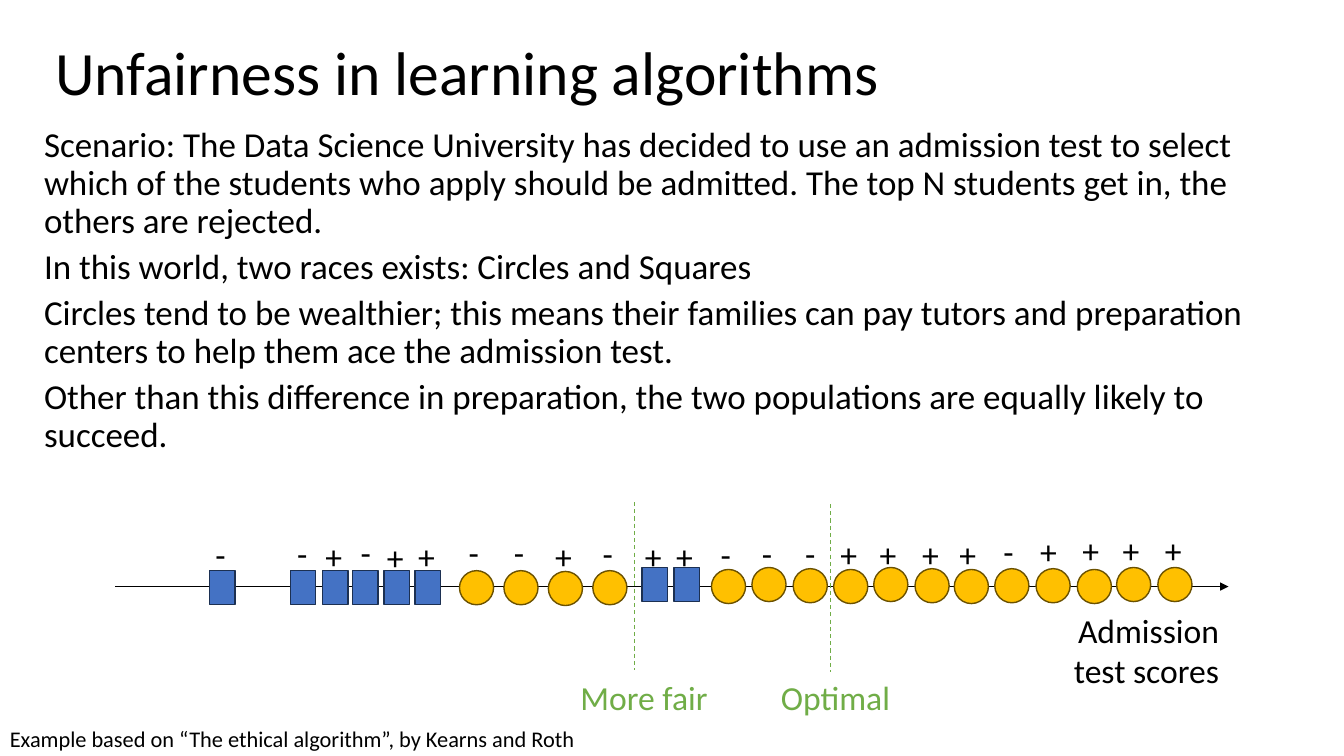
from dataclasses import dataclass

import lxml.etree
import pptx
import pptx.dml.color
import pptx.enum.dml
import pptx.enum.shapes
import pptx.enum.text
import pptx.oxml.ns
import pptx.shapes.autoshape
import pptx.shapes.connector
import pptx.slide
import pptx.util

Cm = pptx.util.Cm
Pt = pptx.util.Pt
ANCHOR = pptx.enum.text.MSO_ANCHOR
ALIGN = pptx.enum.text.PP_ALIGN
AUTO_SIZE = pptx.enum.text.MSO_AUTO_SIZE
SHAPE = pptx.enum.shapes.MSO_SHAPE

COLORS = {
    "text": "000000",
    "square": "4472C4",
    "square edge": "1C3052",
    "circle": "FFC000",
    "circle edge": "6B5100",
    "cutoff": "70AD47",
}
RACES = {"square": (SHAPE.RECTANGLE, 0.64), "circle": (SHAPE.OVAL, 0.86)}
APPLICANT_HEIGHT = 0.86
OUTCOME_WIDTHS = {"+": 0.94, "-": 0.79}
LABEL_HEIGHT = 1.27


@dataclass
class Applicant:
    race: str
    left: float
    top: float
    outcome: str
    outcome_left: float
    outcome_top: float


@dataclass
class Cutoff:
    label: str
    x: float
    top: float
    bottom: float
    label_left: float
    label_width: float


@dataclass
class Label:
    paragraphs: list[str]
    left: float
    top: float
    width: float
    height: float
    size: float = 24
    color: str = "text"
    wrap: bool = False


SCENARIO = [
    "Scenario: The Data Science University has decided to use an admission test to select "
    "which of the students who apply should be admitted. The top N students get in, "
    "the others are rejected.",
    "In this world, two races exists: Circles and Squares",
    "Circles tend to be wealthier; this means their families can pay tutors and "
    "preparation centers to help them ace the admission test.",
    "Other than this difference in preparation, the two populations are equally likely "
    "to succeed.",
]

# Applicants ordered by score
APPLICANTS = [
    Applicant("square", 5.28, 14.38, "-", 5.18, 13.34),
    Applicant("square", 7.32, 14.38, "-", 7.24, 13.31),
    Applicant("square", 8.13, 14.38, "+", 7.95, 13.39),
    Applicant("square", 8.89, 14.38, "-", 8.84, 13.28),
    Applicant("square", 9.68, 14.38, "+", 9.5, 13.41),
    Applicant("square", 10.46, 14.38, "+", 10.29, 13.39),
    Applicant("circle", 11.58, 14.38, "-", 11.56, 13.28),
    Applicant("circle", 12.7, 14.38, "-", 12.7, 13.28),
    Applicant("circle", 13.82, 14.4, "+", 13.74, 13.39),
    Applicant("circle", 14.94, 14.38, "-", 14.94, 13.31),
    Applicant("square", 16.18, 14.3, "+", 16, 13.39),
    Applicant("square", 16.99, 14.3, "+", 16.79, 13.39),
    Applicant("circle", 17.93, 14.35, "-", 17.91, 13.34),
    Applicant("circle", 18.95, 14.3, "-", 18.95, 13.31),
    Applicant("circle", 19.99, 14.33, "-", 20.04, 13.31),
    Applicant("circle", 21.01, 14.35, "+", 20.93, 13.34),
    Applicant("circle", 22.02, 14.3, "+", 21.92, 13.34),
    Applicant("circle", 23.06, 14.33, "+", 22.99, 13.34),
    Applicant("circle", 24.05, 14.35, "+", 23.93, 13.34),
    Applicant("circle", 25.07, 14.33, "-", 25.04, 13.26),
    Applicant("circle", 26.11, 14.33, "+", 25.96, 13.26),
    Applicant("circle", 27.15, 14.35, "+", 27.03, 13.23),
    Applicant("circle", 28.14, 14.3, "+", 28.04, 13.23),
    Applicant("circle", 29.18, 14.3, "+", 29.11, 13.23),
]
CUTOFFS = [
    Cutoff("Optimal", 20.93, 12.7, 16.94, 19.43, 3.3),
    Cutoff("More fair", 16, 12.65, 16.89, 14.38, 3.76),
]


def rgb(name: str) -> pptx.dml.color.RGBColor:
    return pptx.dml.color.RGBColor.from_string(COLORS[name])


def apply_format(target: object, values: dict) -> None:
    for attribute, value in values.items():
        setattr(target, attribute, value)


def add_label(slide: pptx.slide.Slide, label: Label, frame_format: dict | None = None,
              paragraph_format: dict | None = None) -> pptx.shapes.autoshape.Shape:
    box = slide.shapes.add_textbox(
        Cm(label.left), Cm(label.top), Cm(label.width), Cm(label.height))
    frame = box.text_frame
    frame.text = "\n".join(label.paragraphs)
    apply_format(frame, {"word_wrap": label.wrap, "auto_size": AUTO_SIZE.SHAPE_TO_FIT_TEXT}
                 | (frame_format or {}))
    for paragraph in frame.paragraphs:
        apply_format(paragraph, paragraph_format or {})
        for run in paragraph.runs:
            apply_format(run.font, {"name": "Calibri", "size": Pt(label.size)})
            run.font.color.rgb = rgb(label.color)
    return box


def add_line(slide: pptx.slide.Slide, start: tuple[float, float], end: tuple[float, float],
             color: str, width: float) -> pptx.shapes.connector.Connector:
    connector = slide.shapes.add_connector(
        pptx.enum.shapes.MSO_CONNECTOR.STRAIGHT, *map(Cm, start + end))
    connector.line.color.rgb = rgb(color)
    connector.line.width = Pt(width)
    lxml.etree.SubElement(connector._element.spPr, pptx.oxml.ns.qn("a:effectLst"))
    return connector


def add_applicant(slide: pptx.slide.Slide, applicant: Applicant) -> None:
    outline, width = RACES[applicant.race]
    figure = slide.shapes.add_shape(
        outline, Cm(applicant.left), Cm(applicant.top), Cm(width), Cm(APPLICANT_HEIGHT))
    figure.shadow.inherit = False
    figure.fill.solid()
    figure.fill.fore_color.rgb = rgb(applicant.race)
    figure.line.color.rgb = rgb(f"{applicant.race} edge")
    figure.line.width = Pt(1)


def add_cutoff(slide: pptx.slide.Slide, cutoff: Cutoff) -> None:
    threshold = add_line(
        slide, (cutoff.x, cutoff.top), (cutoff.x, cutoff.bottom), "cutoff", 0.75)
    threshold.line.dash_style = pptx.enum.dml.MSO_LINE.DASH
    add_label(slide, Label([cutoff.label], cutoff.label_left, 16.94,
                           cutoff.label_width, LABEL_HEIGHT, color="cutoff"))


def main() -> None:
    presentation = pptx.Presentation()
    apply_format(presentation, {"slide_width": Cm(33.87), "slide_height": Cm(19.05)})
    slide = presentation.slides.add_slide(presentation.slide_layouts[6])

    # Title, scenario and credit
    block = {"auto_size": AUTO_SIZE.NONE, "margin_top": Cm(0.25), "margin_bottom": Cm(0.25)}
    add_label(slide, Label(["Unfairness in learning algorithms"],
                           1.14, 0.84, 31.55, 2.13, size=44, wrap=True),
              block | {"vertical_anchor": ANCHOR.MIDDLE}, {"line_spacing": 0.9})
    scenario = add_label(slide, Label(SCENARIO, 0.43, 2.97, 32.72, 8.05, size=25, wrap=True),
                         block, {"line_spacing": 0.9})
    for index, paragraph in enumerate(scenario.text_frame.paragraphs):
        paragraph._p.get_or_add_pPr().set("marL", str(Cm(0.43)))
        paragraph.space_before = Pt(6 if index else 0)
    add_label(slide, Label(["Example based on “The ethical algorithm”, by Kearns and Roth"],
                           0, 18.16, 20.73, 0.94, size=16, wrap=True))

    # Score axis
    axis = add_line(slide, (2.9, 14.78), (30.96, 14.78), "text", 1)
    lxml.etree.SubElement(
        axis.line._get_or_add_ln(), pptx.oxml.ns.qn("a:tailEnd"), type="triangle")
    add_label(slide, Label(["Admission test scores"], 25.53, 15.24, 5.44, 2.31, wrap=True),
              paragraph_format={"alignment": ALIGN.RIGHT})

    # Applicants, with their outcomes above
    for applicant in APPLICANTS:
        add_applicant(slide, applicant)
    for applicant in APPLICANTS:
        add_label(slide, Label([applicant.outcome], applicant.outcome_left,
                               applicant.outcome_top, OUTCOME_WIDTHS[applicant.outcome],
                               LABEL_HEIGHT))

    # Admission cutoffs
    for cutoff in CUTOFFS:
        add_cutoff(slide, cutoff)

    presentation.save("out.pptx")


if __name__ == "__main__":
    main()
